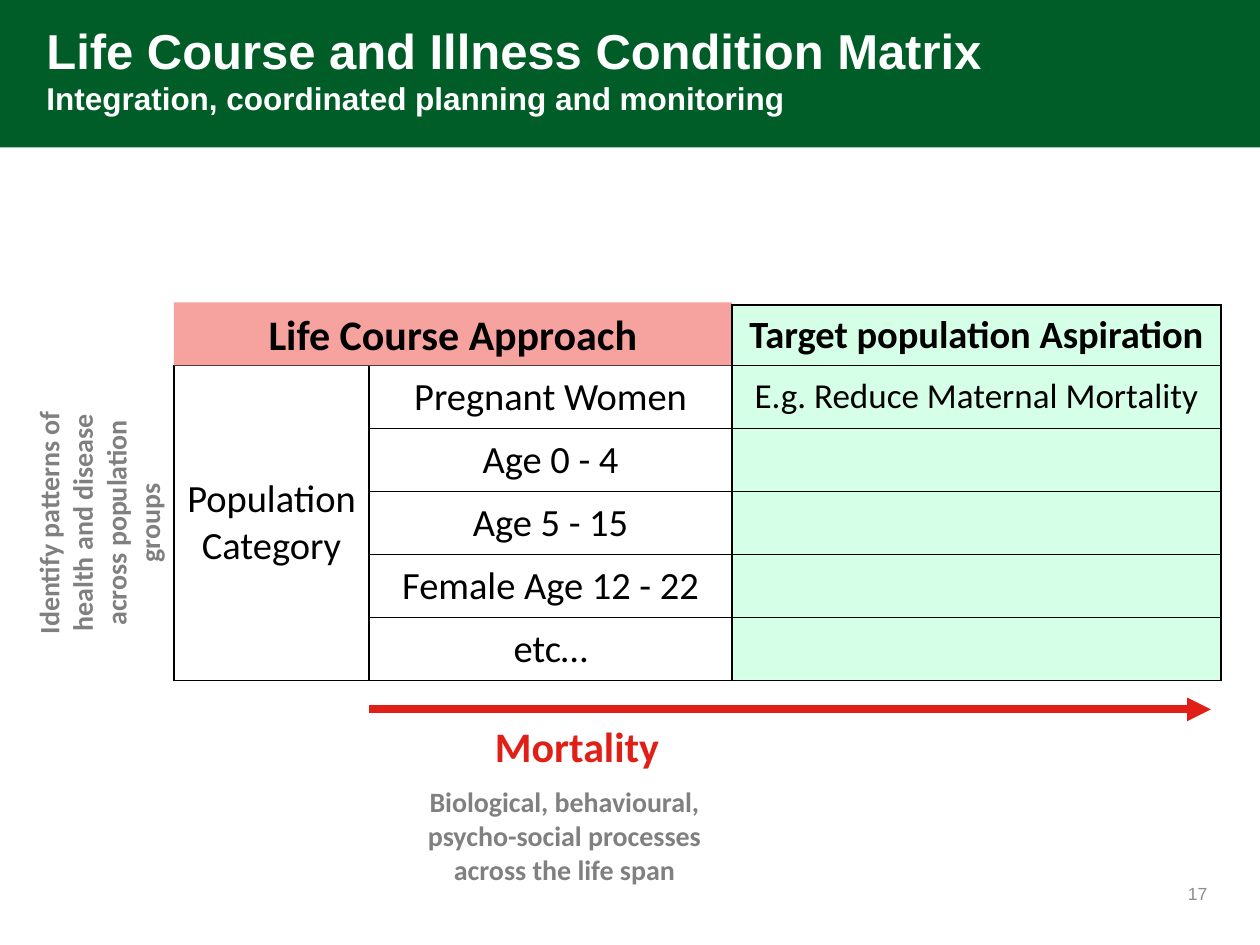
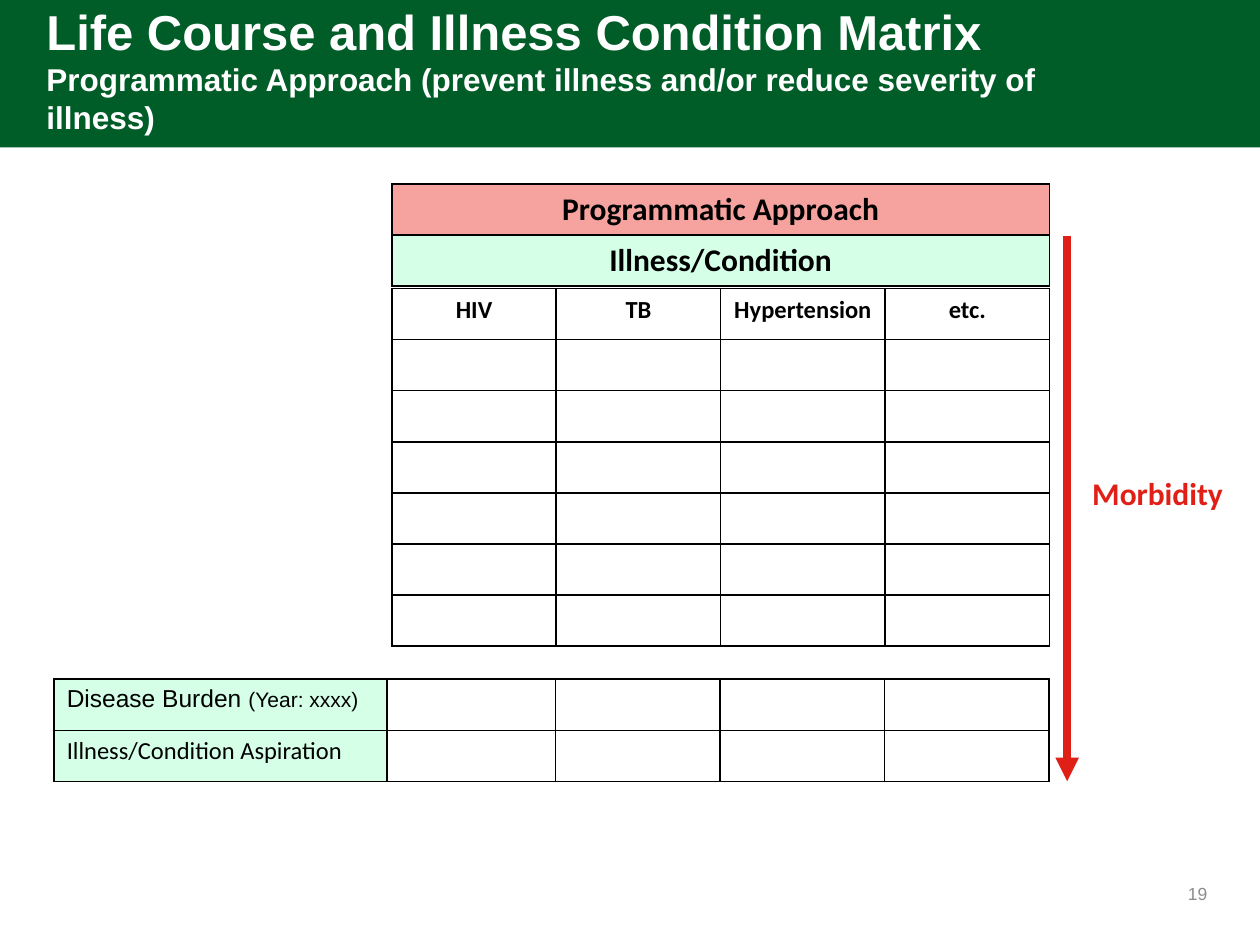
from lxml import etree
from pptx import Presentation
from pptx.dml.color import RGBColor
from pptx.enum import shapes, text
from pptx.oxml.ns import qn
from pptx.util import Inches, Pt

GREEN = RGBColor(0x00, 0x5D, 0x28)
MINT = RGBColor(0xD5, 0xFF, 0xE7)
PINK = RGBColor(0xF6, 0xA3, 0x9F)
RED = RGBColor(0xE0, 0x1F, 0x16)
GREY = RGBColor(0x80, 0x80, 0x80)
PALE_GREY = RGBColor(0x8C, 0x8C, 0x8C)
BLACK = RGBColor(0, 0, 0)
WHITE = RGBColor(255, 255, 255)
LEFT, CENTER, RIGHT = text.PP_ALIGN.LEFT, text.PP_ALIGN.CENTER, text.PP_ALIGN.RIGHT
TOP, MIDDLE = text.MSO_ANCHOR.TOP, text.MSO_ANCHOR.MIDDLE

TITLE = "Life Course and Illness Condition Matrix"
LIFE_COURSE = {
    "subtitle": "Integration, coordinated planning and monitoring",
    "number": "17",
    "category": "Population Category",
    "groups": ["Pregnant Women", "Age 0 - 4", "Age 5 - 15", "Female Age 12 - 22", "etc…"],
    "heading": "Life Course Approach",
    "target": "Target population Aspiration",
    "example": "E.g. Reduce Maternal Mortality",
    "patterns": "Identify patterns of health and disease across population groups",
    "processes": "Biological, behavioural, psycho-social processes across the life span",
    "arrow": "Mortality",
}
PROGRAMMES = {
    "subtitle": "Programmatic Approach (prevent illness and/or reduce severity of illness)",
    "number": "19",
    "headings": [("Programmatic Approach", PINK), ("Illness/Condition", MINT)],
    "conditions": ["HIV", "TB", "Hypertension", "etc."],
    "burden": [("Disease Burden ", 14), ("(Year: xxxx)", 12)],
    "aspiration": "Illness/Condition Aspiration",
    "arrow": "Morbidity",
}


def style(para, size, color=BLACK, bold=False, align=LEFT, font="Calibri"):
    para.alignment = align
    para.font.size, para.font.bold, para.font.name = Pt(size), bold, font
    para.font.color.rgb = color


def add_label(page, place, words, size, color, bold=True, align=CENTER,
              anchor=TOP, font="Calibri"):
    box = page.shapes.add_textbox(*map(Inches, place))
    frame = box.text_frame
    frame.word_wrap = True
    frame.vertical_anchor = anchor
    frame.text = words
    style(frame.paragraphs[0], size, color, bold, align, font)
    return box


def add_block(page, place, color):
    block = page.shapes.add_shape(shapes.MSO_SHAPE.RECTANGLE, *map(Inches, place))
    block.shadow.inherit = False
    block.fill.solid()
    block.fill.fore_color.rgb = color
    block.line.fill.background()
    return block


def add_arrow(page, start, end):
    arrow = page.shapes.add_connector(
        shapes.MSO_CONNECTOR.STRAIGHT, *map(Inches, start + end))
    arrow.line.color.rgb = RED
    arrow.line.width = Pt(4.5)
    etree.SubElement(arrow.line._get_or_add_ln(), qn("a:tailEnd"), type="triangle")
    etree.SubElement(arrow._element.spPr, qn("a:effectLst"))


def draw_borders(cell):
    properties = cell._tc.get_or_add_tcPr()
    for side in ("lnL", "lnR", "lnT", "lnB"):
        border = etree.SubElement(properties, qn(f"a:{side}"), w=str(Pt(1)))
        solid = etree.SubElement(border, qn("a:solidFill"))
        etree.SubElement(solid, qn("a:srgbClr"), val=str(BLACK))


def fill_cell(cell, words="", size=14, bold=False, color=None, align=CENTER, anchor=TOP):
    draw_borders(cell)
    if color is None:
        cell.fill.background()
    else:
        cell.fill.solid()
        cell.fill.fore_color.rgb = color
    cell.vertical_anchor = anchor
    cell.text = words
    style(cell.text_frame.paragraphs[0], size, bold=bold, align=align)


def add_grid(page, left, top, widths, heights, rows):
    grid = page.shapes.add_table(
        len(heights), len(widths), Inches(left), Inches(top),
        Inches(sum(widths)), Inches(sum(heights))).table
    grid.first_row = grid.horz_banding = False
    for column, width in zip(grid.columns, widths):
        column.width = Inches(width)
    for row, height, cells in zip(grid.rows, heights, rows):
        row.height = Inches(height)
        for cell, options in zip(row.cells, cells):
            fill_cell(cell, **options)
    return grid


def add_page(deck, content):
    page = deck.slides.add_slide(deck.slide_layouts[6])
    add_block(page, (0, 0, 10, 1.17), GREEN)
    box = add_label(page, (0.27, 0.17, 8.42, 0.75), "", 28, WHITE,
                    align=LEFT, anchor=MIDDLE, font="Arial")
    para = box.text_frame.paragraphs[0]
    para.add_run().text = TITLE
    para.add_line_break()
    subtitle = para.add_run()
    subtitle.text = content["subtitle"]
    subtitle.font.size = Pt(18)
    add_label(page, (9.06, 6.89, 0.62, 0.4), content["number"], 10, PALE_GREY,
              bold=False, align=RIGHT, anchor=MIDDLE, font="Arial")
    return page


def build_life_course(deck):
    content = LIFE_COURSE
    page = add_page(deck, content)
    groups = content["groups"]
    row, top = 0.5, 2.9
    category_left, category_width, group_width = 1.38, 1.55, 2.88
    group_left = category_left + category_width
    target_left = group_left + group_width
    body = dict(size=22, anchor=MIDDLE)

    add_grid(page, category_left, top, [category_width], [row * len(groups)],
             [[dict(body, words=content["category"])]])
    for index, group in enumerate(groups):
        add_grid(page, group_left, top + index * row, [group_width], [row],
                 [[dict(body, words=group)]])

    heading = add_block(
        page, (category_left, top - row, category_width + group_width, row), PINK)
    heading.text_frame.text = content["heading"]
    style(heading.text_frame.paragraphs[0], 24, bold=True, align=CENTER)

    patterns = add_label(page, (-0.46, 3.56, 2.5, 1.18), content["patterns"], 16, GREY)
    patterns.rotation = 270
    add_label(page, (2.99, 6.18, 2.98, 0.91), content["processes"], 16, GREY)
    add_arrow(page, (group_left, 5.63), (9.61, 5.63))
    add_label(page, (3.83, 5.67, 1.6, 0.5), content["arrow"], 24, RED, align=LEFT)

    targets = [[dict(body, words=content["target"], bold=True, color=MINT)],
               [dict(body, words=content["example"], size=20, color=MINT)]]
    targets += [[dict(color=MINT)]] * (len(groups) - 1)
    add_grid(page, target_left, 2.42, [3.88], [0.48] + [row] * len(groups), targets)


def build_programmes(deck):
    content = PROGRAMMES
    page = add_page(deck, content)
    conditions = content["conditions"]
    left, right, row_count = 3.11, 8.33, 7
    column = (right - left) / len(conditions)
    row = 2.84 / row_count

    for index, condition in enumerate(conditions):
        rows = [[dict(words=condition, bold=True)]] + [[{}]] * (row_count - 1)
        add_grid(page, left + index * column, 2.29, [column], [row] * row_count, rows)

    add_grid(page, left, 1.46, [right - left], [row] * 2,
             [[dict(words=words, size=18, bold=True, color=color)]
              for words, color in content["headings"]])

    label = dict(color=MINT, align=LEFT)
    blanks = [{}] * len(conditions)
    summary = add_grid(page, 0.43, 5.39, [2.64, 1.34] + [column] * 3, [row] * 2,
                       [[label] + blanks,
                        [dict(label, words=content["aspiration"])] + blanks])
    para = summary.cell(0, 0).text_frame.paragraphs[0]
    for words, size in content["burden"]:
        span = para.add_run()
        span.text = words
        span.font.size = Pt(size)
    para.font.name = "Arial"

    add_arrow(page, (8.47, 1.87), (8.47, 6.2))
    add_label(page, (8.57, 3.71, 1.29, 0.4), content["arrow"], 18, RED, align=LEFT)


def main():
    deck = Presentation()
    deck.slide_width, deck.slide_height = Inches(10), Inches(7.5)
    build_life_course(deck)
    build_programmes(deck)
    deck.save("out.pptx")


if __name__ == "__main__":
    main()
